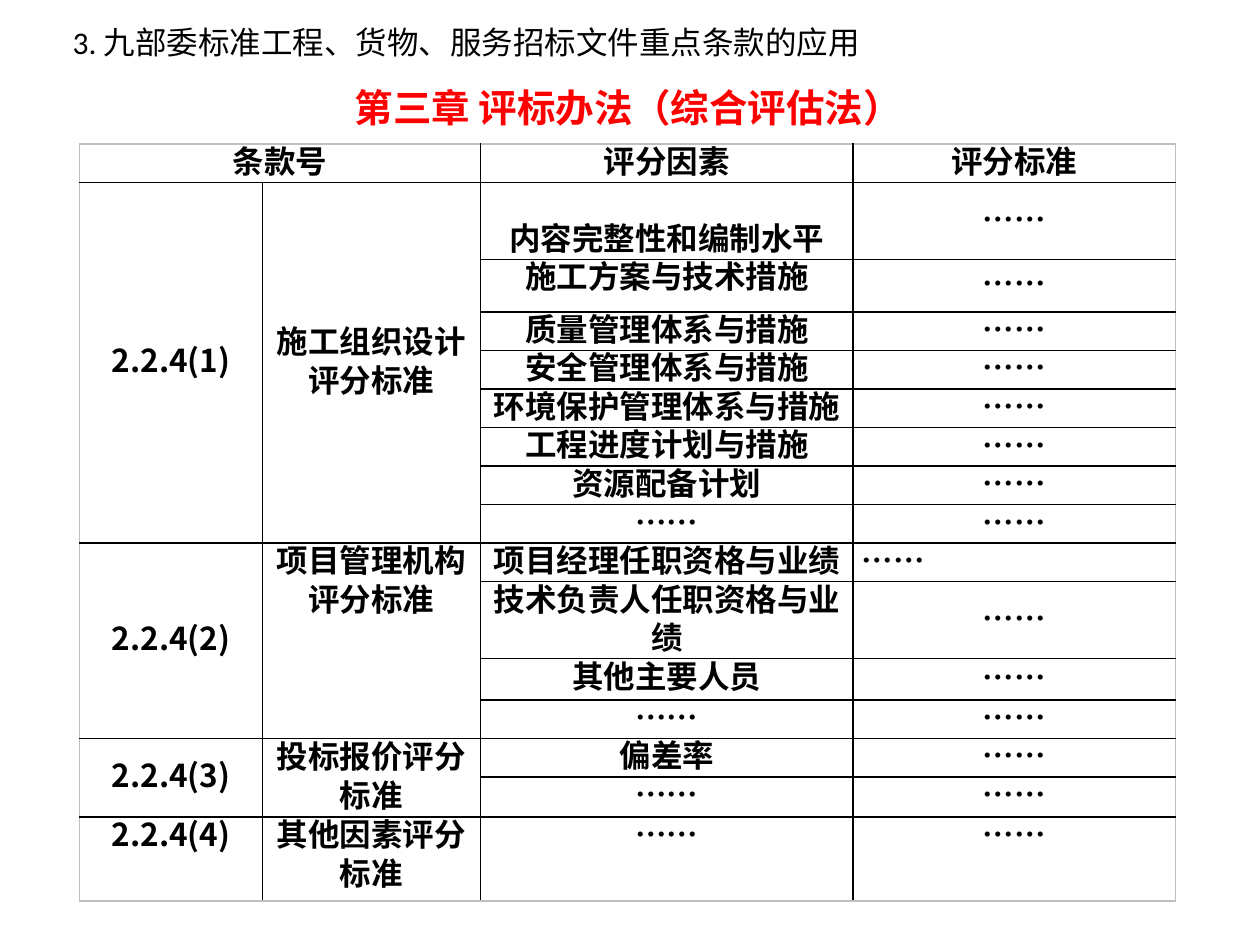
from lxml.etree import SubElement
from pptx import Presentation
from pptx.dml.color import RGBColor
from pptx.enum.text import MSO_ANCHOR as Anchor, PP_ALIGN as Align
from pptx.oxml import parse_xml
from pptx.oxml.ns import nsdecls, qn
from pptx.util import Pt

CJK = "Noto Sans CJK SC"
DOTS = "……"
COLUMN_WIDTHS = [104.4, 124.6, 213.1, 184.3]
ROW_HEIGHTS = [22, 44, 30] + [22] * 7 + [44, 23.5, 22, 22, 23, 48]
HEADERS = ["条款号", "", "评分因素", "评分标准"]
CLAUSES = [
    ("2.2.4(1)", "施工组织设计评分标准", Anchor.MIDDLE, Anchor.MIDDLE,
     ["内容完整性和编制水平", "施工方案与技术措施", "质量管理体系与措施",
      "安全管理体系与措施", "环境保护管理体系与措施", "工程进度计划与措施",
      "资源配备计划", DOTS]),
    ("2.2.4(2)", "项目管理机构评分标准", Anchor.MIDDLE, Anchor.TOP,
     ["项目经理任职资格与业绩", "技术负责人任职资格与业绩", "其他主要人员", DOTS]),
    ("2.2.4(3)", "投标报价评分标准", Anchor.MIDDLE, Anchor.MIDDLE, ["偏差率", DOTS]),
    ("2.2.4(4)", "其他因素评分标准", Anchor.TOP, Anchor.TOP, [DOTS]),
]


def rgb(color):
    return RGBColor.from_string(color)


def write(frame, text, size=18, font=CJK, color="000000", bold=True,
          align=Align.CENTER, anchor=Anchor.MIDDLE, spacing=None):
    frame.word_wrap = True
    frame.vertical_anchor = anchor
    paragraph = frame.paragraphs[0]
    paragraph.alignment = align
    if spacing:
        paragraph.line_spacing = Pt(spacing)
    run = paragraph.add_run()
    run.text = text
    run.font.size = Pt(size)
    run.font.bold = bold
    run.font.name = font
    run.font.color.rgb = rgb(color)
    SubElement(run.font._element, qn("a:ea")).set("typeface", CJK)


def set_borders(cell, colors):
    properties = cell._tc.get_or_add_tcPr()
    for index, (side, color) in enumerate(zip("LRTB", colors)):
        properties.insert(index, parse_xml(
            f'<a:ln{side} {nsdecls("a")} w="12700"><a:solidFill>'
            f'<a:srgbClr val="{color}"/></a:solidFill></a:ln{side}>'))


def fill_cell(cell, text, margin=5, anchor=Anchor.MIDDLE, align=Align.CENTER):
    cell.margin_left = cell.margin_right = Pt(margin)
    cell.margin_top = cell.margin_bottom = 0
    write(cell.text_frame, text, align=align, spacing=22)
    cell.vertical_anchor = anchor


def add_heading(slide, left, top, width, height):
    heading = slide.shapes.add_textbox(Pt(left), Pt(top), Pt(width), Pt(height))
    write(heading.text_frame, "3. 九部委标准工程、货物、服务招标文件重点条款的应用",
          font="Calibri", bold=False, align=Align.LEFT, anchor=Anchor.TOP)


def place_title(slide, left, top, width, height):
    title = slide.shapes.title
    title.left, title.top = Pt(left), Pt(top)
    title.width, title.height = Pt(width), Pt(height)
    write(title.text_frame, "第三章 评标办法（综合评估法）", size=22, color="FF0000")


def add_scoring_table(slide, left, top):
    last_row, last_column = len(ROW_HEIGHTS) - 1, len(COLUMN_WIDTHS) - 1
    table = slide.shapes.add_table(
        last_row + 1, last_column + 1, Pt(left), Pt(top),
        Pt(sum(COLUMN_WIDTHS)), Pt(sum(ROW_HEIGHTS))).table
    table.first_row = table.horz_banding = False
    for column, width in zip(table.columns, COLUMN_WIDTHS):
        column.width = Pt(width)
    for r, height in enumerate(ROW_HEIGHTS):
        table.rows[r].height = Pt(height)
        for c in range(last_column + 1):
            cell = table.cell(r, c)
            cell.fill.background()
            outer = [c == 0, c == last_column, r == 0, r == last_row]
            set_borders(cell, ["BFBFBF" if edge else "000000" for edge in outer])

    table.cell(0, 0).merge(table.cell(0, 1))
    for c, header in enumerate(HEADERS):
        if header:
            fill_cell(table.cell(0, c), header)

    first = 1
    for number, name, number_anchor, name_anchor, factors in CLAUSES:
        end = first + len(factors) - 1
        for c, label, anchor in [(0, number, number_anchor), (1, name, name_anchor)]:
            if end > first:
                table.cell(first, c).merge(table.cell(end, c))
            fill_cell(table.cell(first, c), label, anchor=anchor)
        for r, factor in enumerate(factors, first):
            long_name = factor.startswith("技术负责人")
            factor_anchor = Anchor.BOTTOM if r == 1 else Anchor.TOP
            fill_cell(table.cell(r, 2), factor, margin=2 if long_name else 5,
                      anchor=Anchor.MIDDLE if long_name else factor_anchor)
            fill_cell(table.cell(r, 3), DOTS,
                      anchor=Anchor.TOP if r >= 13 else Anchor.MIDDLE,
                      align=Align.JUSTIFY if r == 9 else Align.CENTER)
        first = end + 1


def main():
    deck = Presentation()
    deck.slide_width, deck.slide_height = Pt(720), Pt(540)
    slide = deck.slides.add_slide(deck.slide_layouts[5])
    slide.background.fill.solid()
    slide.background.fill.fore_color.rgb = rgb("FFFFFF")
    place_title(slide, 34.5, 44, 649, 34)
    add_scoring_table(slide, 45.5, 82.2)
    add_heading(slide, 34.5, 9.5, 482, 29)
    deck.save("out.pptx")


if __name__ == "__main__":
    main()
